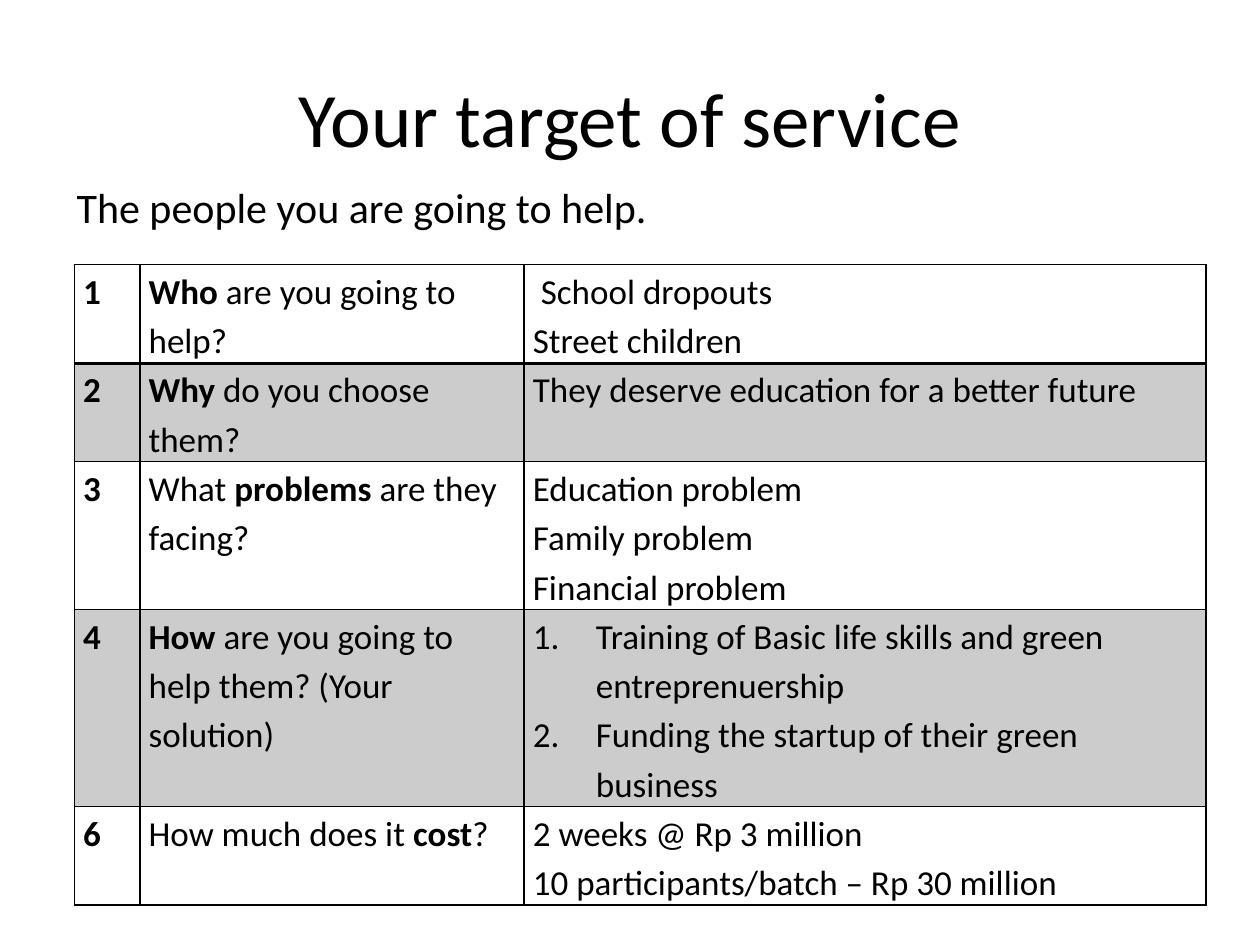
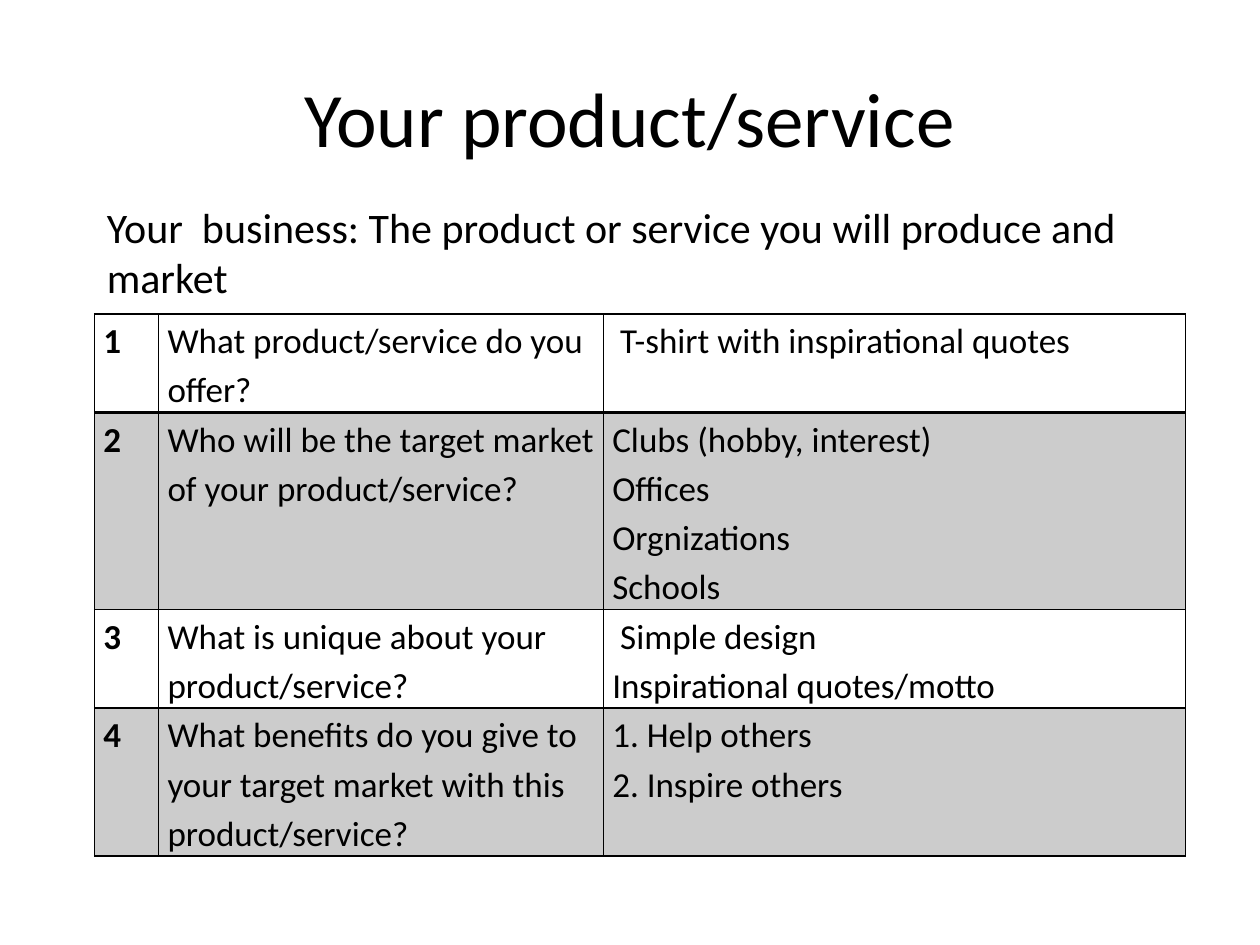
from dataclasses import dataclass
from typing import Any

from lxml.etree import SubElement as Sub, fromstring
from pptx import Presentation as Deck
from pptx.dml.color import RGBColor as Rgb
from pptx.enum.text import MSO_ANCHOR as Anchor, PP_ALIGN as Align
from pptx.oxml.ns import qn
from pptx.util import Inches, Pt

NS = "http://schemas.openxmlformats.org/drawingml/2006/main"
INK = "000000"
FONT = "Calibri"
LINE = 0.39
HEAD = {"size": Pt(44), "name": FONT, "bold": False}
LEAD = {"size": Pt(24), "name": FONT, "bold": False}
BODY = {"size": Pt(20), "name": FONT}
CELL = {
    "margin_left": Inches(0.07),
    "margin_right": Inches(0.07),
    "margin_top": 0,
    "margin_bottom": 0,
    "vertical_anchor": Anchor.TOP,
}


@dataclass(frozen=True)
class Row:
    mark: str
    ask: str
    reply: tuple[str, ...]
    lines: int
    listed: bool = False


@dataclass(frozen=True)
class Page:
    title: str
    lead: str
    box: tuple[float, float, float, float]
    left: float
    top: float
    cols: tuple[float, ...]
    rows: tuple[Row, ...]


PAGES = (
    Page(
        "Your target of service",
        "The people you are going to help.",
        (0.51, 1.39, 9.06, 0.5), 0.59, 2.1, (0.52, 3.05, 5.41),
        (
            Row("1", "*Who* are you going to help?",
                (" School dropouts", "Street children"), 2),
            Row("2", "*Why* do you choose them?",
                ("They deserve education for a better future",), 2),
            Row("3", "What *problems* are they facing?",
                ("Education problem", "Family problem", "Financial problem"), 3),
            Row("4", "*How* are you going to help them? (Your solution)",
                ("Training of Basic life skills and green entreprenuership",
                 "Funding the startup of their green business"), 4, True),
            Row("6", "How much does it *cost*?",
                ("2 weeks @ Rp 3 million",
                 "10 participants/batch – Rp 30 million"), 2),
        ),
    ),
    Page(
        "Your product/service",
        "Your  business: The product or service you will produce and market",
        (0.75, 1.55, 8.66, 0.91), 0.75, 2.49, (0.51, 3.53, 4.62),
        (
            Row("1", "What product/service do you offer?",
                (" T-shirt with inspirational quotes",), 2),
            Row("2", "Who will be the target market of your product/service?",
                ("Clubs (hobby, interest)", "Offices", "Orgnizations", "Schools"), 4),
            Row("3", "What is unique about your product/service?",
                (" Simple design", "Inspirational quotes/motto"), 2),
            Row("4", "What benefits do you give to your target market with this "
                "product/service?",
                ("1. Help others", "2. Inspire others"), 3),
        ),
    ),
)


def put(item: Any, form: dict[str, Any]) -> None:
    for key, val in form.items():
        setattr(item, key, val)


def tint(color: Any, code: str) -> None:
    color.rgb = Rgb.from_string(code)


def add_run(para: Any, text: str, form: dict[str, Any]) -> None:
    run = para.add_run()
    run.text = text
    put(run.font, form)
    tint(run.font.color, INK)


def number(para: Any) -> None:
    props = para._p.get_or_add_pPr()
    props.set("marL", str(Inches(0.5)))
    props.set("indent", str(Inches(-0.5)))
    Sub(props, qn("a:buFont"), typeface="+mj-lt")
    Sub(props, qn("a:buAutoNum"), type="arabicPeriod")


def write(cell: Any, texts: tuple[str, ...], listed: bool = False) -> None:
    put(cell, CELL)
    frame = cell.text_frame
    for i, text in enumerate(texts):
        para = frame.add_paragraph() if i else frame.paragraphs[0]
        para.line_spacing = 1.15
        if listed:
            number(para)
        for j, part in enumerate(text.split("*")):
            if part:
                add_run(para, part, BODY | {"bold": j % 2 == 1})


def shade(cell: Any, dark: bool) -> None:
    if not dark:
        cell.fill.background()
        return
    cell.fill.solid()
    tint(cell.fill.fore_color, INK)
    for node in cell._tc.tcPr.iter(qn("a:srgbClr")):
        Sub(node, qn("a:alpha"), val="20000")


def frame_cell(cell: Any, first: bool, second: bool) -> None:
    props = cell._tc.get_or_add_tcPr()
    for i, side in enumerate("LRTB"):
        thick = (first and side == "B") or (second and side == "T")
        props.insert(i, fromstring(
            f'<a:ln{side} xmlns:a="{NS}" w="{Pt(2 if thick else 1)}">'
            f'<a:solidFill><a:srgbClr val="{INK}"/></a:solidFill></a:ln{side}>'))


def add_grid(slide: Any, page: Page) -> None:
    high = LINE * sum(row.lines for row in page.rows)
    grid = slide.shapes.add_table(
        len(page.rows), len(page.cols), Inches(page.left), Inches(page.top),
        Inches(sum(page.cols)), Inches(high)).table
    put(grid, {"first_row": False, "horz_banding": False})
    for col, wide in zip(grid.columns, page.cols):
        col.width = Inches(wide)
    for i, row in enumerate(page.rows):
        grid.rows[i].height = Inches(LINE * row.lines)
        texts = ((f"*{row.mark}*",), (row.ask,), row.reply)
        for j, text in enumerate(texts):
            cell = grid.cell(i, j)
            write(cell, text, row.listed and j == 2)
            shade(cell, i % 2 == 1)
            frame_cell(cell, i == 0, i == 1)


def add_title(slide: Any, text: str) -> None:
    title = slide.shapes.title
    put(title, {"left": Inches(0.5), "top": Inches(0.3),
                "width": Inches(9), "height": Inches(1.25)})
    title.text_frame.vertical_anchor = Anchor.MIDDLE
    para = title.text_frame.paragraphs[0]
    para.alignment = Align.CENTER
    add_run(para, text, HEAD)


def add_lead(slide: Any, page: Page) -> None:
    box = slide.shapes.add_textbox(*map(Inches, page.box))
    box.text_frame.word_wrap = True
    add_run(box.text_frame.paragraphs[0], page.lead, LEAD)


def main() -> None:
    deck = Deck()
    put(deck, {"slide_width": Inches(10), "slide_height": Inches(7.5)})
    for page in PAGES:
        slide = deck.slides.add_slide(deck.slide_layouts[5])
        add_title(slide, page.title)
        add_grid(slide, page)
        add_lead(slide, page)
    deck.save("out.pptx")


if __name__ == "__main__":
    main()
